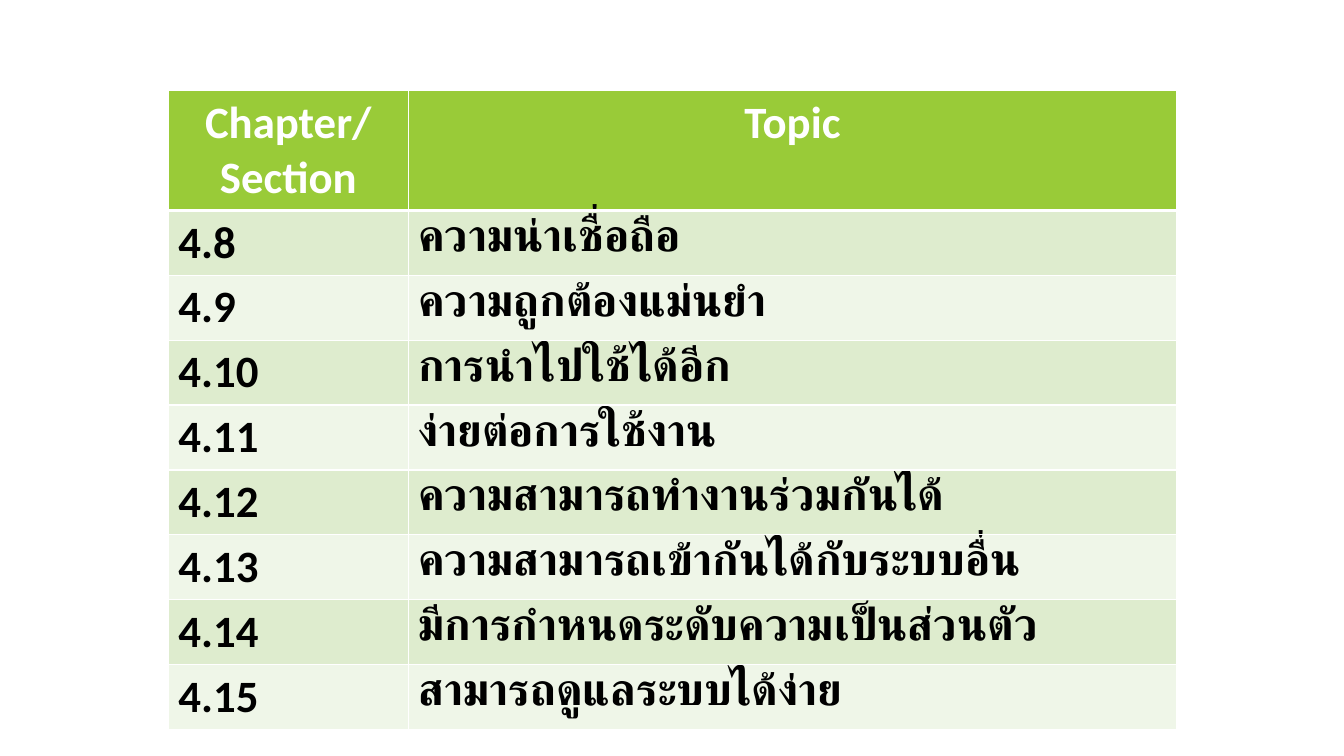
"""Build a slide with a table of chapter sections and their topics."""
from lxml import etree
from pptx import Presentation, util as u
from pptx.dml.color import RGBColor
from pptx.enum import text
from pptx.oxml import ns

HUES = {"head": "99CB38", "odd": "DEECCE", "even": "EFF6E8",
        "white": "FFFFFF", "black": "000000"}
ROWS = [
    ("Chapter/Section", "Topic"),
    ("4.8", "ความน่าเชื่อถือ"),
    ("4.9", "ความถูกต้องแม่นยำ"),
    ("4.10", "การนำไปใช้ได้อีก"),
    ("4.11", "ง่ายต่อการใช้งาน"),
    ("4.12", "ความสามารถทำงานร่วมกันได้"),
    ("4.13", "ความสามารถเข้ากันได้กับระบบอื่น"),
    ("4.14", "มีการกำหนดระดับความเป็นส่วนตัว"),
    ("4.15", "สามารถดูแลระบบได้ง่าย"),
]
WIDTHS = (2.38, 7.62)
HIGH = 0.55


def edge(cell, side, width):
    """Draw one white border of a cell."""
    props = cell._tc.get_or_add_tcPr()
    line = etree.SubElement(props, ns.qn(f"a:ln{side}"), w=str(u.Pt(width)))
    fill = etree.SubElement(line, ns.qn("a:solidFill"))
    etree.SubElement(fill, ns.qn("a:srgbClr"), val=HUES["white"])


deck = Presentation()
deck.slide_width = u.Inches(13.33)
deck.slide_height = u.Inches(7.5)
slide = deck.slides.add_slide(deck.slide_layouts[6])

frame = slide.shapes.add_table(
    len(ROWS), len(WIDTHS), u.Inches(1.67), u.Inches(0.9),
    u.Inches(sum(WIDTHS)), u.Inches(HIGH * len(ROWS)))
table = frame.table
for col, width in zip(table.columns, WIDTHS):
    col.width = u.Inches(width)

for r, row in enumerate(ROWS):
    table.rows[r].height = u.Inches(HIGH)
    tone = "head" if r == 0 else "odd" if r % 2 else "even"
    for c, words in enumerate(row):
        cell = table.cell(r, c)
        for side in "LRTB":
            edge(cell, side, 3 if r == 0 and side == "B" else 1)
        cell.fill.solid()
        cell.fill.fore_color.rgb = RGBColor.from_string(HUES[tone])
        para = cell.text_frame.paragraphs[0]
        para.alignment = text.PP_ALIGN.LEFT if r else text.PP_ALIGN.CENTER
        run = para.add_run()
        run.text = words
        run.font.name = "Calibri"
        run.font.size = u.Pt(32)
        run.font.bold = True
        ink = HUES["black" if r else "white"]
        run.font.color.rgb = RGBColor.from_string(ink)

deck.save("out.pptx")
